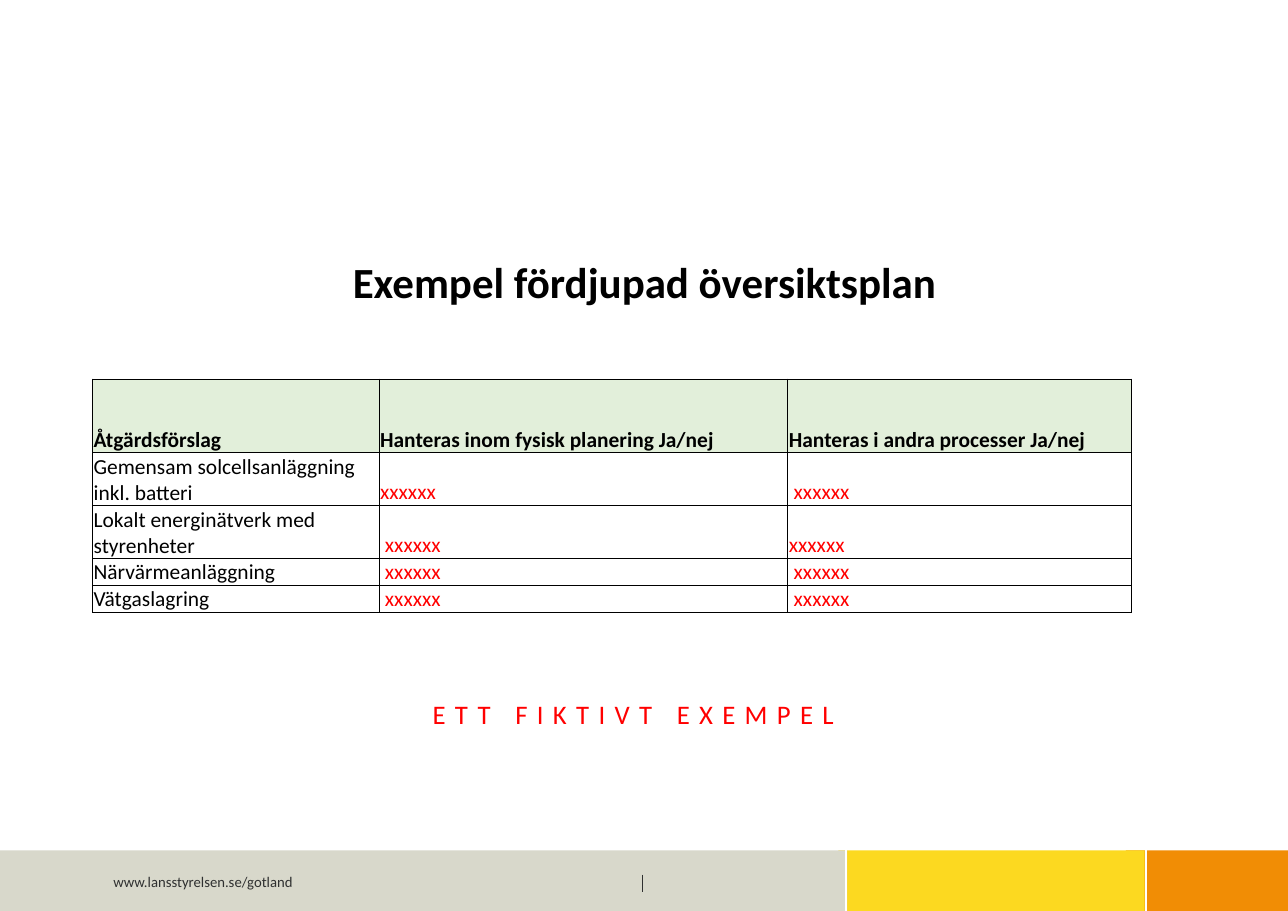
from lxml import etree
from pptx import Presentation
from pptx.dml.color import RGBColor
from pptx.enum import shapes, text
from pptx.oxml import parse_xml
from pptx.oxml.ns import nsdecls, qn
from pptx.util import Inches, Pt

BLACK = RGBColor(0x00, 0x00, 0x00)
WHITE = RGBColor(0xFF, 0xFF, 0xFF)
RED = RGBColor(0xFF, 0x00, 0x00)
GREEN = RGBColor(0xE2, 0xEF, 0xDA)
GREY = RGBColor(0xD8, 0xD8, 0xCB)
YELLOW = RGBColor(0xFC, 0xD9, 0x20)
ORANGE = RGBColor(0xF1, 0x8D, 0x05)
DARK = RGBColor(0x2F, 0x30, 0x30)
WIDTH, HEIGHT, BAND_TOP = 11.69, 8.27, 7.72


def set_font(font, size, color, bold=False):
    font.name = "Calibri"
    font.size = Pt(size)
    font.bold = bold
    font.color.rgb = color


def set_margins(box, left, top, right, bottom):
    box.margin_left, box.margin_top = Inches(left), Inches(top)
    box.margin_right, box.margin_bottom = Inches(right), Inches(bottom)


prs = Presentation()
prs.slide_width, prs.slide_height = Inches(WIDTH), Inches(HEIGHT)
slide = prs.slides.add_slide(prs.slide_layouts[5])

# Footer band
for left, width, color in ((10.22, 1.47, ORANGE), (7.61, 2.78, YELLOW), (0, 7.69, GREY)):
    band = slide.shapes.add_shape(shapes.MSO_SHAPE.RECTANGLE, Inches(left), Inches(BAND_TOP),
                                  Inches(width), Inches(HEIGHT - BAND_TOP))
    band.shadow.inherit = False
    band.fill.solid()
    band.fill.fore_color.rgb = color
    band.line.fill.background()

# Footer dividers
for x1, y1, x2, y2, color, weight in (
    (0, 7.71, WIDTH, 7.71, WHITE, 1.5),
    (7.68, BAND_TOP, 7.68, HEIGHT, WHITE, 1.5),
    (10.4, BAND_TOP, 10.4, HEIGHT, WHITE, 1.5),
    (5.83, 7.94, 5.83, 8.1, DARK, 0.5),
):
    divider = slide.shapes.add_connector(shapes.MSO_CONNECTOR.STRAIGHT, Inches(x1), Inches(y1),
                                         Inches(x2), Inches(y2))
    divider.line.color.rgb = color
    divider.line.width = Pt(weight)
    etree.SubElement(divider._element.spPr, qn("a:effectLst"))

# Footer address
address = slide.shapes.add_textbox(Inches(0.93), Inches(7.87), Inches(1.86), Inches(0.26)).text_frame
address.word_wrap = False
address.text = "www.lansstyrelsen.se/gotland"
set_font(address.paragraphs[0].font, 9.6, DARK)

# Notice in the title placeholder
notice = slide.shapes.title
notice.left, notice.top = Inches(3.42), Inches(6.25)
notice.width, notice.height = Inches(4.66), Inches(0.38)
notice_frame = notice.text_frame
notice_frame.text = "ETT FIKTIVT EXEMPEL"
notice_frame.auto_size = text.MSO_AUTO_SIZE.NONE
notice_frame.vertical_anchor = text.MSO_ANCHOR.BOTTOM
set_margins(notice_frame, 0, 0, 0, 0)
notice_line = notice_frame.paragraphs[0]
notice_line.alignment = text.PP_ALIGN.CENTER
set_font(notice_line.font, 17.5, RED)
notice_line.runs[0].font._element.set("spc", "610")

# Heading
heading = slide.shapes.add_textbox(Inches(2.15), Inches(2.33), Inches(7.4), Inches(1.16)).text_frame
heading.word_wrap = True
set_margins(heading, 0.09, 0.04, 0.09, 0.04)
heading.text = "Exempel fördjupad översiktsplan"
heading_line = heading.paragraphs[0]
heading_line.alignment = text.PP_ALIGN.CENTER
heading_line.line_spacing = 0.9
set_font(heading_line.font, 28.1, BLACK, True)

# Table of proposed measures
measures = (
    ("Åtgärdsförslag", "Hanteras inom fysisk planering Ja/nej", "Hanteras i andra processer Ja/nej"),
    ("Gemensam solcellsanläggning inkl. batteri", "xxxxxx", " xxxxxx"),
    ("Lokalt energinätverk med styrenheter", " xxxxxx", "xxxxxx"),
    ("Närvärmeanläggning", " xxxxxx", " xxxxxx"),
    ("Vätgaslagring", " xxxxxx", " xxxxxx"),
)
column_widths = (2.6, 3.71, 3.12)
row_heights = (0.67, 0.48, 0.48, 0.24, 0.24)
table = slide.shapes.add_table(len(measures), len(column_widths), Inches(0.84), Inches(3.44),
                               Inches(sum(column_widths)), Inches(sum(row_heights))).table
table.horz_banding = False
for column, width in zip(table.columns, column_widths):
    column.width = Inches(width)
for r, (row, height) in enumerate(zip(measures, row_heights)):
    table.rows[r].height = Inches(height)
    for c, wording in enumerate(row):
        cell = table.cell(r, c)
        cell.text = wording
        cell.vertical_anchor = text.MSO_ANCHOR.BOTTOM
        set_margins(cell, 0.01, 0.01, 0.01, 0)
        set_font(cell.text_frame.paragraphs[0].font, 14, RED if r and c else BLACK, r == 0)
        for side in ("lnL", "lnR", "lnT", "lnB"):
            cell._tc.get_or_add_tcPr().append(parse_xml(
                f'<a:{side} {nsdecls("a")} w="6350"><a:solidFill>'
                f'<a:srgbClr val="{BLACK}"/></a:solidFill></a:{side}>'))
        if r == 0:
            cell.fill.solid()
            cell.fill.fore_color.rgb = GREEN
        else:
            cell.fill.background()

prs.save("out.pptx")
